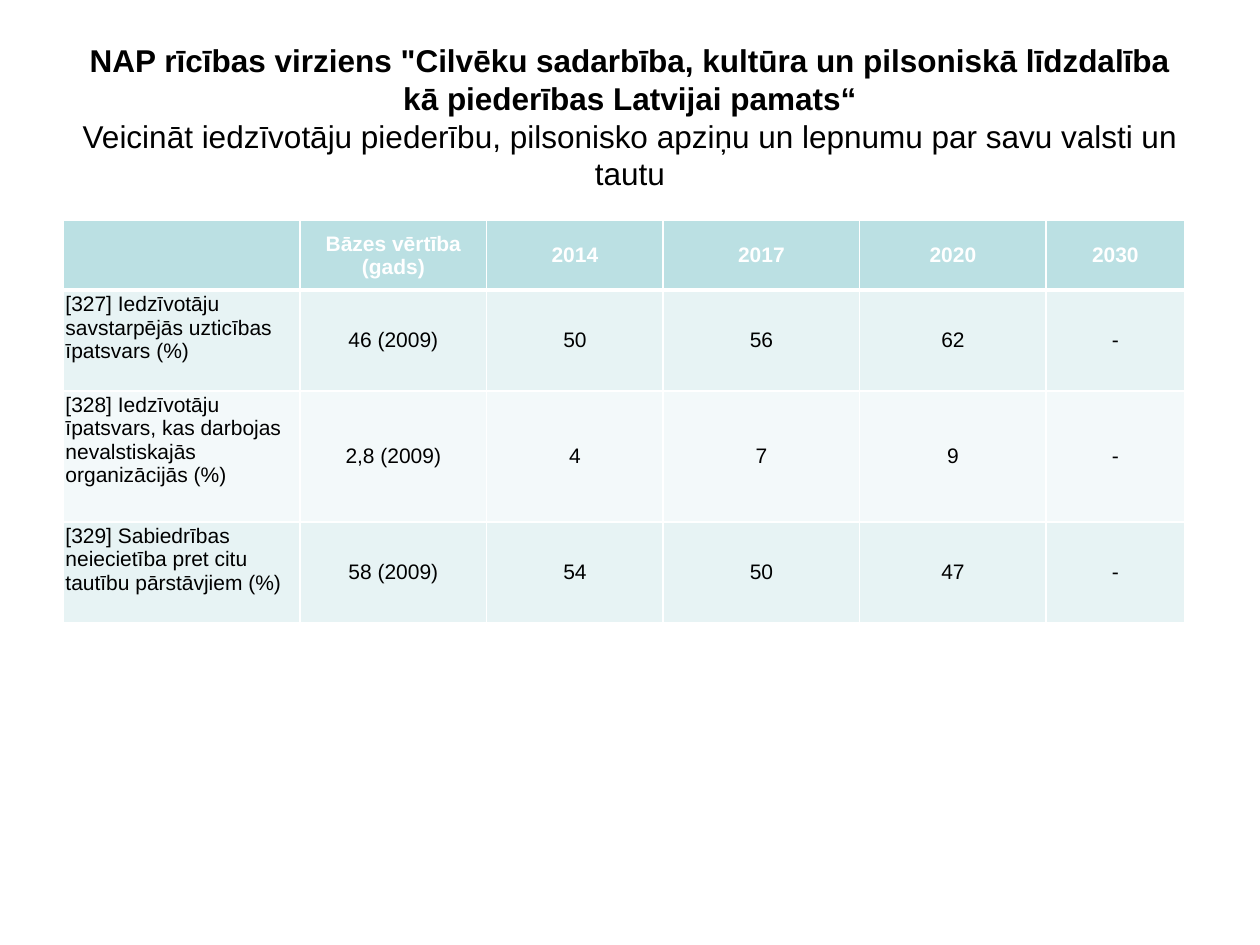
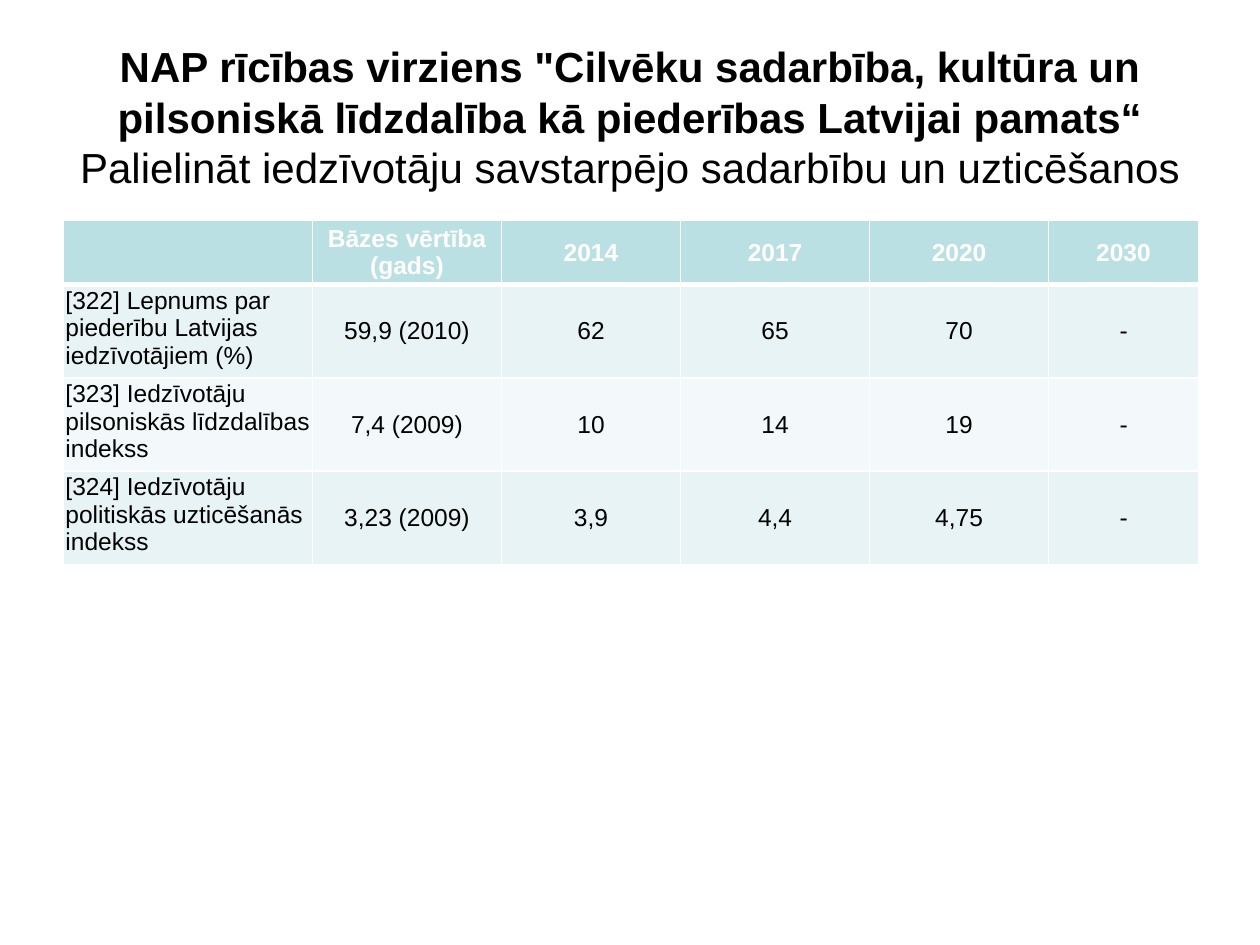
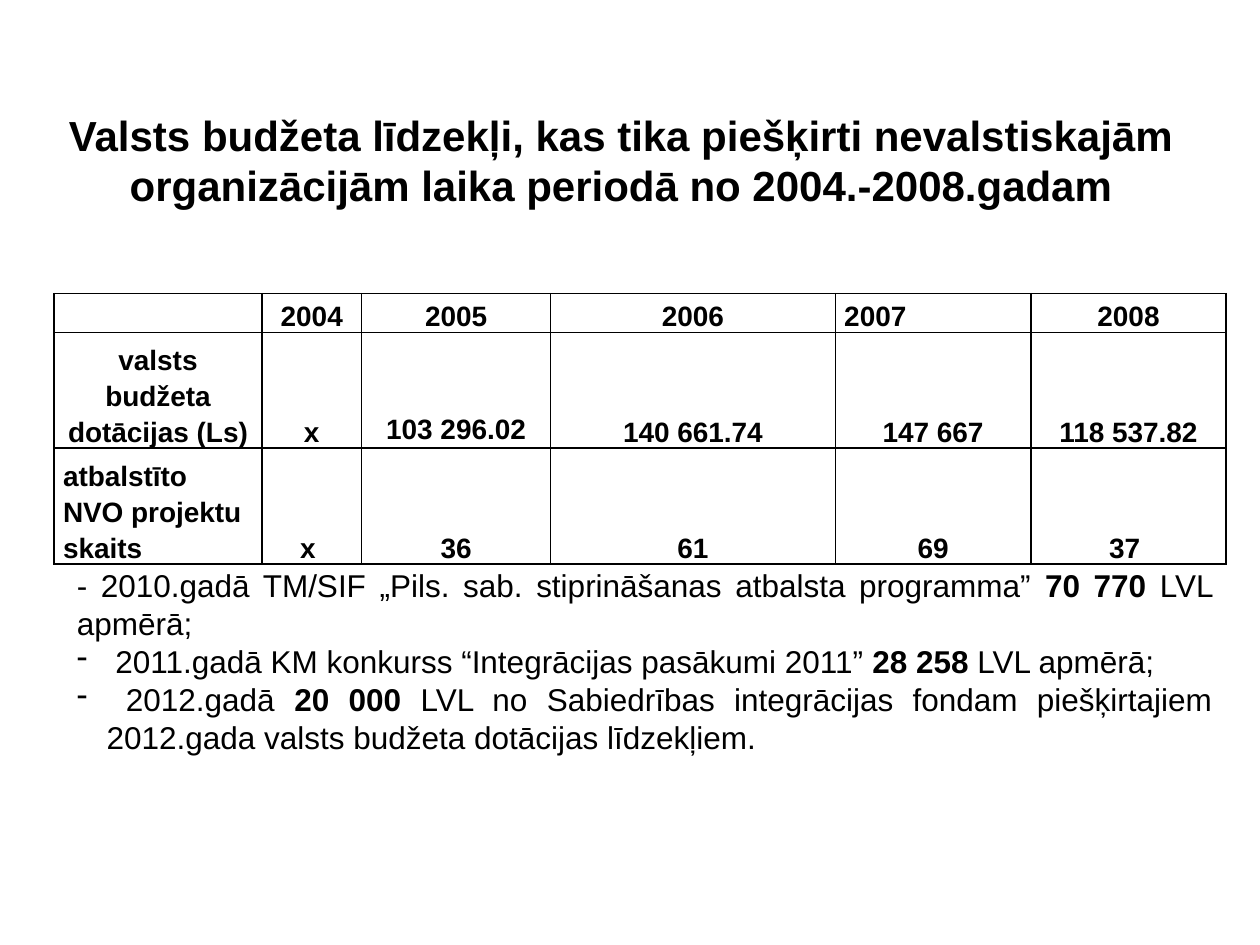
from dataclasses import dataclass, field

from lxml.etree import SubElement
from pptx import Presentation
from pptx.dml.color import RGBColor
from pptx.enum.text import MSO_ANCHOR, PP_ALIGN
from pptx.oxml.ns import qn
from pptx.util import Cm, Pt

FONT = "Arial"
COLORS = {
    "text": "000000",
    "header_text": "FFFFFF",
    "header": "BBE0E3",
    "band_dark": "E7F3F4",
    "band_light": "F3F9FA",
    "white_rule": "FFFFFF",
    "black_rule": "000000",
}
DIRECTION = ('NAP rīcības virziens "Cilvēku sadarbība, kultūra un '
             'pilsoniskā līdzdalība kā piederības Latvijai pamats“')
INDICATOR_HEADER = ("", "Bāzes vērtība (gads)", "2014", "2017", "2020", "2030")


@dataclass
class Title:
    heading: str
    size: int
    goal: str = ""
    box: tuple[float, float, float, float] = (1.27, 0.76, 22.86, 3.18)


@dataclass
class Grid:
    left: float
    top: float
    columns: tuple[float, ...]
    heights: tuple[float, ...]
    rows: list[tuple[str, ...]]
    size: int
    banded: bool = True
    left_aligned: set[tuple[int, int]] = field(default_factory=set)
    lifted: set[tuple[int, int]] = field(default_factory=set)


@dataclass
class Note:
    before: str
    amount: str
    after: str
    bulleted: bool = True


def style_font(font, size: int, bold: bool, color: str = "text") -> None:
    font.name, font.size, font.bold = FONT, Pt(size), bold
    font.color.rgb = RGBColor.from_string(COLORS[color])


def add_text_frame(slide, box: tuple[float, ...]):
    frame = slide.shapes.add_textbox(*(Cm(value) for value in box)).text_frame
    frame.word_wrap = True
    frame.vertical_anchor = MSO_ANCHOR.MIDDLE
    return frame


def add_title(slide, title: Title) -> None:
    frame = add_text_frame(slide, title.box)
    paragraph = frame.paragraphs[0]
    paragraph.text = f"{title.heading}\v{title.goal}" if title.goal else title.heading
    paragraph.alignment = PP_ALIGN.CENTER
    for index, run in enumerate(paragraph.runs):
        style_font(run.font, title.size, bold=index == 0)


def set_borders(cell, color: str, top: int, bottom: int) -> None:
    for side, width in (("L", 1), ("R", 1), ("T", top), ("B", bottom)):
        line = SubElement(cell._tc.get_or_add_tcPr(), qn(f"a:ln{side}"), w=str(Pt(width)))
        fill = SubElement(line, qn("a:solidFill"))
        SubElement(fill, qn("a:srgbClr"), val=COLORS[color])


def paint_cell(cell, grid: Grid, row: int) -> None:
    if not grid.banded:
        set_borders(cell, "black_rule", 1, 1)
        cell.fill.background()
        return
    set_borders(cell, "white_rule", 3 if row == 1 else 1, 3 if row == 0 else 1)
    band = "header" if row == 0 else "band_dark" if row % 2 else "band_light"
    cell.fill.solid()
    cell.fill.fore_color.rgb = RGBColor.from_string(COLORS[band])


def write_cell(cell, grid: Grid, row: int, column: int, text: str) -> None:
    side, edge = (0.05, 0.05) if grid.banded else (0.18, 0)
    cell.margin_left = cell.margin_right = Cm(side)
    cell.margin_top = Cm(edge)
    cell.margin_bottom = Cm(0.06 if (row, column) in grid.lifted else edge)
    is_label = grid.banded and column == 0
    if is_label:
        cell.vertical_anchor = MSO_ANCHOR.TOP
    else:
        cell.vertical_anchor = MSO_ANCHOR.MIDDLE if grid.banded else MSO_ANCHOR.BOTTOM

    paragraph = cell.text_frame.paragraphs[0]
    paragraph.text = text
    to_left = is_label or (row, column) in grid.left_aligned
    paragraph.alignment = PP_ALIGN.LEFT if to_left else PP_ALIGN.CENTER
    if not grid.banded:
        paragraph.line_spacing = 1.15
    if not text:
        SubElement(paragraph._p, qn("a:endParaRPr"), sz=str(grid.size * 100))
    white = grid.banded and row == 0
    for run in paragraph.runs:
        style_font(run.font, grid.size, white or not grid.banded,
                   "header_text" if white else "text")


def add_grid(slide, grid: Grid) -> None:
    table = slide.shapes.add_table(
        len(grid.rows), len(grid.columns), Cm(grid.left), Cm(grid.top),
        Cm(sum(grid.columns)), Cm(sum(grid.heights))).table
    table.horz_banding = False
    for column, width in zip(table.columns, grid.columns):
        column.width = Cm(width)
    for row, height in zip(table.rows, grid.heights):
        row.height = Cm(height)
    for row, texts in enumerate(grid.rows):
        for column, text in enumerate(texts):
            cell = table.cell(row, column)
            paint_cell(cell, grid, row)
            write_cell(cell, grid, row, column, text)


def add_notes_list(slide, notes: list[Note]) -> None:
    frame = add_text_frame(slide, (1.3, 11.13, 23.39, 4.39))
    for index, note in enumerate(notes):
        paragraph = frame.add_paragraph() if index else frame.paragraphs[0]
        paragraph.alignment = PP_ALIGN.JUSTIFY
        if note.bulleted:
            properties = paragraph._p.get_or_add_pPr()
            properties.set("marL", str(Cm(0.6)))
            properties.set("indent", str(-Cm(0.6)))
            SubElement(properties, qn("a:buChar"), char="-")
        for text in (note.before, note.amount, note.after):
            run = paragraph.add_run()
            run.text = text
            style_font(run.font, 18, bold=text == note.amount)


# Indicators of civic trust
TRUST = Grid(
    1.27, 4.45, (4.78, 3.76, 3.56, 3.96, 3.76, 2.79), (1.4, 2.03, 2.64, 2.03),
    [INDICATOR_HEADER,
     ("[327] Iedzīvotāju savstarpējās uzticības īpatsvars (%)",
      "46 (2009)", "50", "56", "62", "-"),
     ("[328] Iedzīvotāju īpatsvars, kas darbojas nevalstiskajās organizācijās (%)",
      "2,8 (2009)", "4", "7", "9", "-"),
     ("[329] Sabiedrības neiecietība pret citu tautību pārstāvjiem (%)",
      "58 (2009)", "54", "50", "47", "-")],
    size=12)

# Indicators of belonging
BELONGING = Grid(
    1.27, 4.45, (5.03, 3.81, 3.61, 3.81, 3.61, 3.02), (1.19, 1.78, 1.78, 1.75),
    [INDICATOR_HEADER,
     ("[322] Lepnums par piederību Latvijas iedzīvotājiem (%)",
      "59,9 (2010)", "62", "65", "70", "-"),
     ("[323] Iedzīvotāju pilsoniskās līdzdalības indekss",
      "7,4 (2009)", "10", "14", "19", "-"),
     ("[324] Iedzīvotāju politiskās uzticēšanās indekss",
      "3,23 (2009)", "3,9", "4,4", "4,75", "-")],
    size=14)

# State funding of non-governmental organisations
FUNDING = Grid(
    1.09, 5.92, (4.19, 2.01, 3.81, 5.74, 3.94, 3.94), (0.72, 2.16, 2.16),
    [("", "2004", "2005", "2006", "2007", "2008"),
     ("valsts budžeta dotācijas (Ls)", "x", "103 296.02", "140 661.74",
      "147 667", "118 537.82"),
     ("atbalstīto NVO projektu skaits", "x ", "36", "61", "69", "37 ")],
    size=16, banded=False, left_aligned={(0, 4), (2, 0)}, lifted={(1, 2)})

FUNDING_NOTES = [
    Note("- 2010.gadā TM/SIF „Pils. sab. stiprināšanas atbalsta programma” ",
         "70 770 ", "LVL apmērā;", bulleted=False),
    Note(" 2011.gadā KM konkurss “Integrācijas pasākumi 2011” ",
         "28 258 ", "LVL apmērā;"),
    Note(" 2012.gadā ", "20 000 ",
         "LVL no Sabiedrības integrācijas fondam piešķirtajiem "
         "2012.gada valsts budžeta dotācijas līdzekļiem."),
]

PAGES = [
    (Title(DIRECTION, 18, "Veicināt iedzīvotāju piederību, pilsonisko apziņu "
                          "un lepnumu par savu valsti un tautu"), TRUST, []),
    (Title(DIRECTION, 24, "Palielināt iedzīvotāju savstarpējo sadarbību "
                          "un uzticēšanos"), BELONGING, []),
    (Title("Valsts budžeta līdzekļi, kas tika piešķirti nevalstiskajām "
           "organizācijām laika periodā no 2004.-2008.gadam", 24,
           box=(1.09, 1.32, 22.86, 3.81)), FUNDING, FUNDING_NOTES),
]


def main() -> None:
    presentation = Presentation()
    presentation.slide_width, presentation.slide_height = Cm(25.4), Cm(19.05)
    for title, grid, notes in PAGES:
        slide = presentation.slides.add_slide(presentation.slide_layouts[6])
        add_title(slide, title)
        add_grid(slide, grid)
        if notes:
            add_notes_list(slide, notes)
    presentation.save("out.pptx")


if __name__ == "__main__":
    main()
